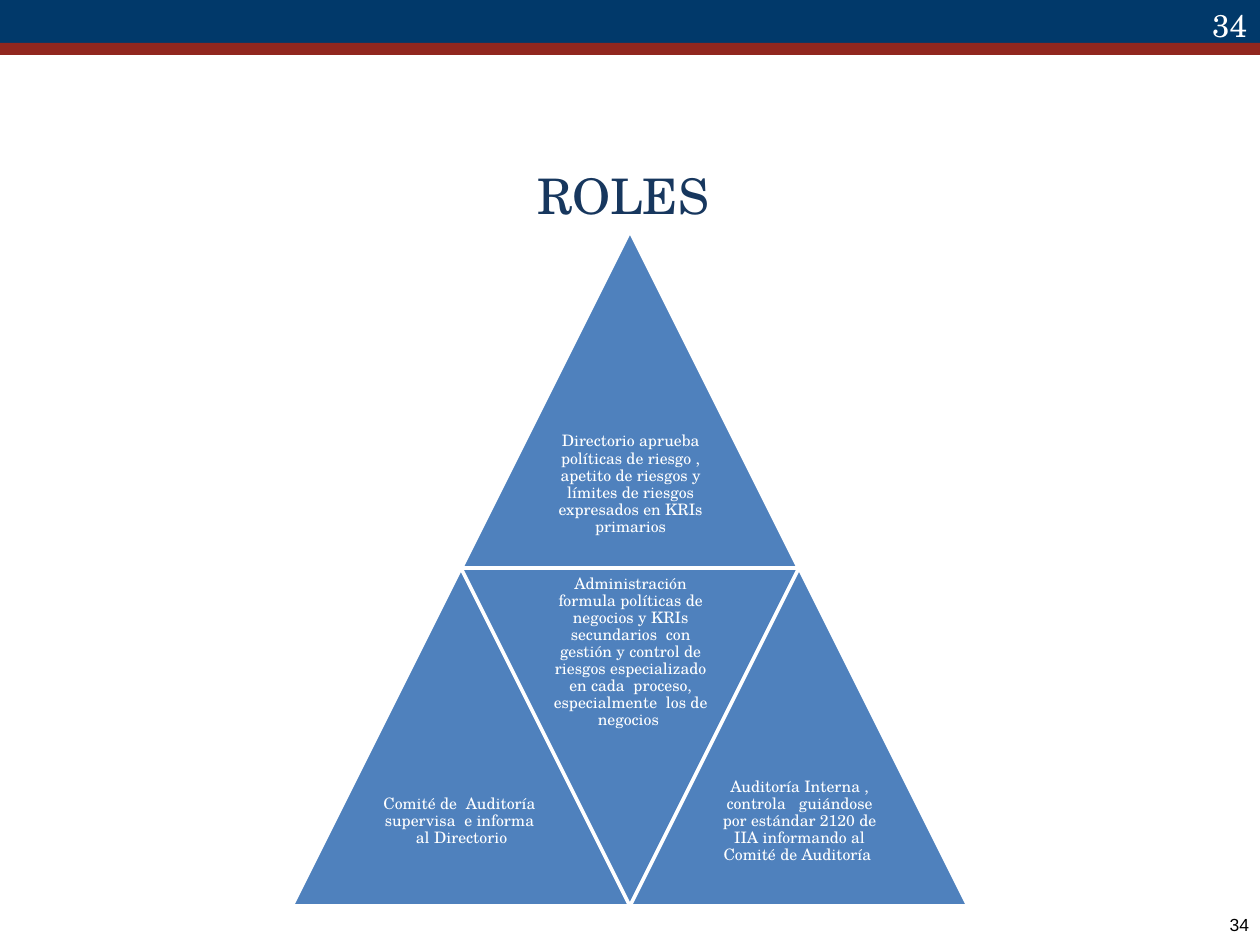
"""Build the ROLES slide: four triangles forming a pyramid of risk governance roles."""
import pptx
import pptx.dml.color
import pptx.enum.shapes
import pptx.enum.text
import pptx.util

SCALE = 914400 / 126
NAVY = pptx.dml.color.RGBColor(0x01, 0x39, 0x6A)
RED = pptx.dml.color.RGBColor(0x91, 0x27, 0x1F)
TITLE_BLUE = pptx.dml.color.RGBColor(0x17, 0x37, 0x5E)
BLUE = pptx.dml.color.RGBColor(0x4F, 0x81, 0xBD)
WHITE = pptx.dml.color.RGBColor(0xFF, 0xFF, 0xFF)
BLACK = pptx.dml.color.RGBColor(0x00, 0x00, 0x00)
SERIF = "TeX Gyre Schola"
SHAPES = pptx.enum.shapes.MSO_SHAPE
ANCHOR = pptx.enum.text.MSO_ANCHOR
ALIGN = pptx.enum.text.PP_ALIGN


def add_figure(kind, box, color):
    shape = slide.shapes.add_shape(kind, *[round(value * SCALE) for value in box])
    shape.shadow.inherit = False
    shape.fill.solid()
    shape.fill.fore_color.rgb = color
    shape.line.fill.background()
    return shape


def add_text(text, box, size, color, alignment, anchor, margins=(13, 6), name=SERIF, spacing=1.0):
    shape = slide.shapes.add_textbox(*[round(value * SCALE) for value in box])
    frame = shape.text_frame
    side, end = [round(value * SCALE) for value in margins]
    frame_format = {
        "word_wrap": True,
        "vertical_anchor": anchor,
        "margin_left": side,
        "margin_right": side,
        "margin_top": end,
        "margin_bottom": end,
    }
    paragraph = frame.paragraphs[0]
    run = paragraph.add_run()
    run.text = text
    paragraph_format = {"alignment": alignment, "line_spacing": spacing}
    font_format = {"name": name, "size": pptx.util.Pt(size)}
    for target, values in (
        (frame, frame_format),
        (paragraph, paragraph_format),
        (run.font, font_format),
    ):
        for attribute, value in values.items():
            setattr(target, attribute, value)
    run.font.color.rgb = color


presentation = pptx.Presentation()
presentation.slide_width = round(1260 * SCALE)
presentation.slide_height = round(945 * SCALE)
slide = presentation.slides.add_slide(presentation.slide_layouts[6])

add_figure(SHAPES.RECTANGLE, (0, 0, 1260, 43), NAVY)
add_figure(SHAPES.RECTANGLE, (0, 43, 1260, 12), RED)
add_text("34", (1039, 914, 210, 21), 10, BLACK, ALIGN.RIGHT, ANCHOR.TOP, (0, 0), "Arial")
add_text("ROLES ", (63, 158, 1134, 73), 28, TITLE_BLUE, ALIGN.CENTER, ANCHOR.MIDDLE)

SIDE = 338
HALF = SIDE // 2
CENTER = 630
TOP = 231
roles = [
    (0, 0, 0, "Directorio aprueba políticas de riesgo , apetito de riesgos y límites de "
              "riesgos expresados en KRIs primarios"),
    (-1, 1, 0, "Comité de  Auditoría  supervisa  e informa  al Directorio"),
    (0, 1, 180, "Administración formula políticas de negocios y KRIs secundarios  con gestión "
                "y control de riesgos especializado en cada  proceso, especialmente  los de negocios "),
    (1, 1, 0, "Auditoría Interna , controla   guiándose por estándar 2120 de IIA informando "
              "al Comité de Auditoría "),
]
for column, row, rotation, text in roles:
    middle = CENTER + column * HALF
    top = TOP + row * SIDE - row
    triangle = add_figure(SHAPES.ISOSCELES_TRIANGLE, (middle - HALF, top, SIDE, SIDE), BLUE)
    triangle.rotation = rotation
    triangle.line.color.rgb = WHITE
    triangle.line.width = pptx.util.Pt(2)
    text_top = top if rotation else top + HALF
    text_box = (middle - HALF // 2, text_top, HALF, HALF)
    add_text(text, text_box, 9, WHITE, ALIGN.CENTER, ANCHOR.MIDDLE, (5, 5), spacing=0.9)

add_text("34", (1155, 0, 105, 50), 18, WHITE, ALIGN.RIGHT, ANCHOR.BOTTOM)

presentation.save("out.pptx")
